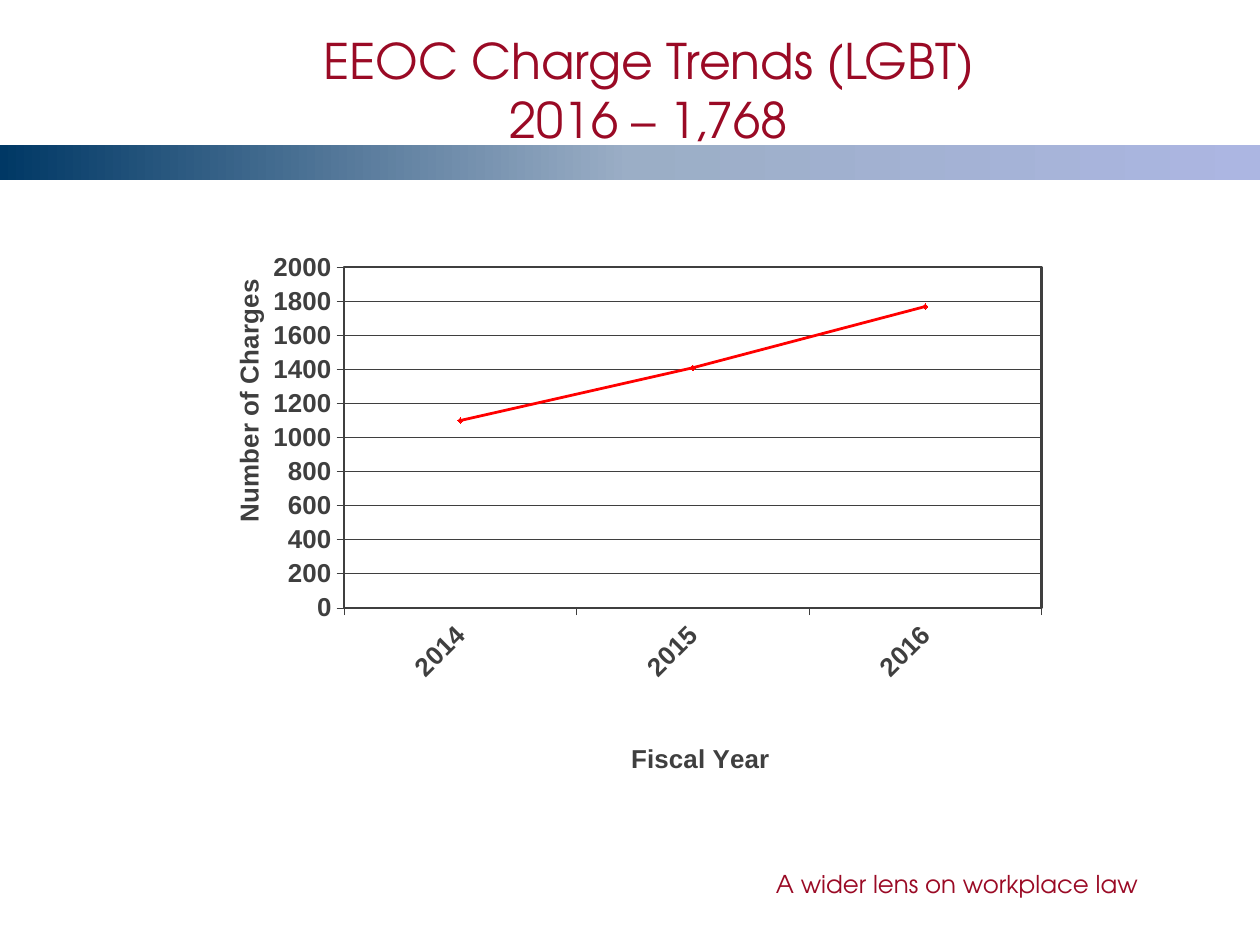
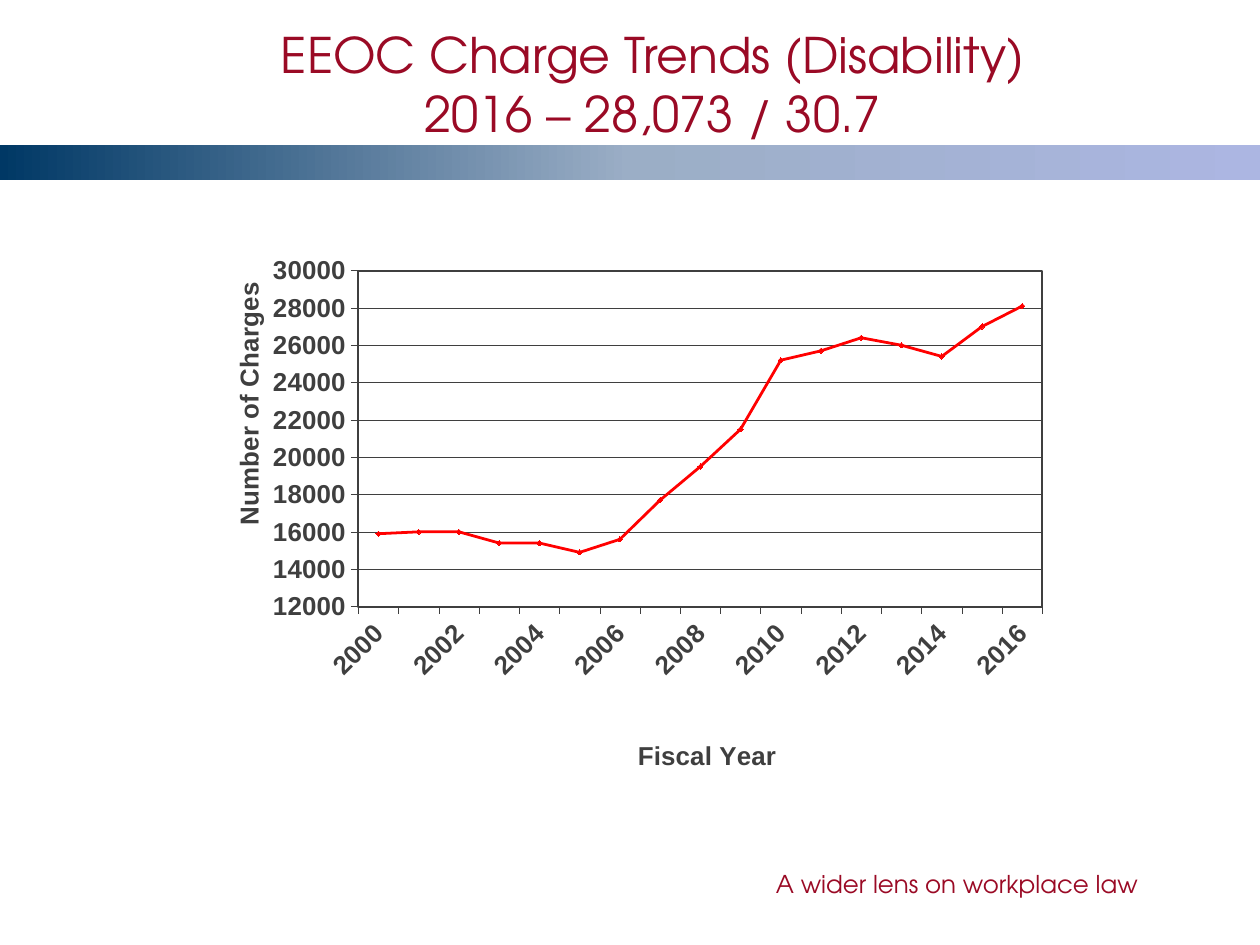
from copy import deepcopy

from lxml import etree
from pptx import Presentation
from pptx.chart.data import CategoryChartData
from pptx.dml.color import RGBColor
from pptx.enum.chart import XL_CHART_TYPE as ChartType, XL_MARKER_STYLE as Marker
from pptx.enum.chart import XL_TICK_MARK as Tick
from pptx.enum.shapes import MSO_SHAPE as Shape
from pptx.enum.text import MSO_ANCHOR as Anchor, PP_ALIGN as Align
from pptx.oxml import parse_xml
from pptx.oxml.ns import nsdecls, qn
from pptx.util import Inches, Pt

CRIMSON, CHARCOAL, RED = "9A0A25", "3F3F3F", "FF0000"
BAND_STOPS = [(0, "ACB6E2"), (0.5, "9BAEC6"), (1, "003865")]
DISPLAY_FONT, CHART_FONT = "TeX Gyre Adventor", "Arial"
CHART_SIZE = 14.8

LGBT_CHARGES = {2014: 1100, 2015: 1410, 2016: 1770}
DISABILITY_CHARGES = dict(zip(range(2000, 2017), [
    15900, 16000, 16000, 15400, 15400, 14900, 15600, 17700, 19500,
    21500, 25200, 25700, 26400, 26000, 25400, 27000, 28100]))


def rgb(hex_color):
    return RGBColor.from_string(hex_color)


def style_font(font, name, size, color, bold=False):
    font.name, font.size, font.bold = name, Pt(size), bold
    font.color.rgb = rgb(color)


def style_line(line, color, width):
    line.color.rgb = rgb(color)
    line.width = Pt(width)


def add_text(s, box, text, size, align=Align.LEFT, anchor=Anchor.TOP, wrap=True):
    tf = s.shapes.add_textbox(*map(Inches, box)).text_frame
    tf.word_wrap, tf.vertical_anchor = wrap, anchor
    p = tf.paragraphs[0]
    p.text = text
    p.alignment = align
    for r in p.runs:
        style_font(r.font, DISPLAY_FONT, size, CRIMSON)


def add_band(s):
    band = s.shapes.add_shape(Shape.RECTANGLE, 0, Inches(1.15), Inches(10), Inches(0.28))
    band.shadow.inherit = False
    band.line.fill.background()
    band.fill.gradient()
    band.fill.gradient_angle = 180
    first = band._element.spPr.find(".//" + qn("a:gs"))
    first.addnext(deepcopy(first))
    for stop, (position, color) in zip(band.fill.gradient_stops, BAND_STOPS):
        stop.position = position
        stop.color.rgb = rgb(color)


def set_layout(parent, index, inner=False, **fractions):
    """Place a chart part by hand, in fractions of the chart's size."""
    for old in parent.findall(qn("c:layout")):
        parent.remove(old)
    layout = etree.Element(qn("c:layout"))
    manual = etree.SubElement(layout, qn("c:manualLayout"))
    settings = {"layoutTarget": "inner"} if inner else {}
    settings.update(xMode="edge", yMode="edge", **fractions)
    for tag, value in settings.items():
        etree.SubElement(manual, qn("c:" + tag)).set("val", str(value))
    parent.insert(index, layout)


def style_axis(axis, title, x, y, title_turn, label_turn=0):
    axis.major_tick_mark, axis.minor_tick_mark = Tick.OUTSIDE, Tick.NONE
    style_line(axis.format.line, CHARCOAL, 0.2)
    style_font(axis.tick_labels.font, CHART_FONT, CHART_SIZE, CHARCOAL, True)
    labels = axis._element.find(qn("c:txPr")).find(qn("a:bodyPr"))
    labels.set("rot", str(label_turn * 60000))

    tf = axis.axis_title.text_frame
    tf.text = title
    style_font(tf.paragraphs[0].runs[0].font, CHART_FONT, CHART_SIZE, CHARCOAL, True)
    tf._txBody.find(qn("a:bodyPr")).set("rot", str(title_turn * 60000))
    set_layout(axis.axis_title._element, 1, x=x, y=y)


def frame_plot(plot_area):
    plot_area.append(parse_xml(
        f'<c:spPr {nsdecls("c", "a")}><a:noFill/><a:ln w="15240"><a:solidFill>'
        f'<a:srgbClr val="{CHARCOAL}"/></a:solidFill></a:ln></c:spPr>'))


def style_series(series):
    series.smooth = False
    style_line(series.format.line, RED, 1.6)
    marker = series.marker
    marker.style, marker.size = Marker.DIAMOND, 3
    marker.format.fill.solid()
    marker.format.fill.fore_color.rgb = rgb(RED)
    marker.format.line.color.rgb = rgb(RED)


def add_trend_chart(s, top, height, charges, scale, plot_x, plot_w, year_title_x, label_skip):
    data = CategoryChartData(number_format="0")
    data.categories = [str(year) for year in charges]
    data.add_series("Series 1", charges.values())
    chart = s.shapes.add_chart(ChartType.LINE_MARKERS, Inches(1.67), Inches(top),
                               Inches(6.67), Inches(height), data).chart
    chart.has_legend = chart.has_title = False
    style_font(chart.font, CHART_FONT, CHART_SIZE, CHARCOAL, True)
    chart.plots[0].vary_by_categories = False
    style_series(chart.series[0])

    years, counts = chart.category_axis, chart.value_axis
    style_axis(years, "Fiscal Year", year_title_x, 0.88, 0, -45)
    years.has_major_gridlines = False
    skip = etree.Element(qn("c:tickLblSkip"), val=str(label_skip))
    years._element.find(qn("c:noMultiLvlLbl")).addprevious(skip)

    style_axis(counts, "Number of Charges", 0.02, 0.09, -90)
    counts.minimum_scale, counts.maximum_scale, counts.major_unit = scale
    counts.has_major_gridlines = True
    style_line(counts.major_gridlines.format.line, CHARCOAL, 0.2)

    plot_area = chart._chartSpace.chart.plotArea
    set_layout(plot_area, 0, inner=True, x=plot_x, y=0.078, w=plot_w, h=0.581)
    frame_plot(plot_area)


def add_trend_slide(prs, title, title_box):
    """Add a slide with the shared footer, band and title style."""
    s = prs.slides.add_slide(prs.slide_layouts[6])
    add_text(s, (6.06, 6.85, 3.1, 0.34), "A wider lens on workplace law", 14, wrap=False)
    add_band(s)
    add_text(s, title_box, title, 28, Align.CENTER, Anchor.MIDDLE)
    return s


def main():
    prs = Presentation()
    prs.slide_width, prs.slide_height = Inches(10), Inches(7.5)

    s = add_trend_slide(prs, "EEOC Charge Trends (LGBT)\n2016 – 1,768",
                        (0.92, 0.15, 8.46, 1.12))
    add_trend_chart(s, 1.76, 4.65, LGBT_CHARGES, (0, 2000, 200),
                    plot_x=0.159, plot_w=0.83, year_title_x=0.495, label_skip=1)

    s = add_trend_slide(prs, "EEOC Charge Trends (Disability)\n2016 – 28,073 / 30.7",
                        (1.07, 0.1, 8.22, 1.12))
    add_trend_chart(s, 1.79, 4.59, DISABILITY_CHARGES, (12000, 30000, 2000),
                    plot_x=0.176, plot_w=0.814, year_title_x=0.503, label_skip=2)

    prs.save("out.pptx")


if __name__ == "__main__":
    main()
